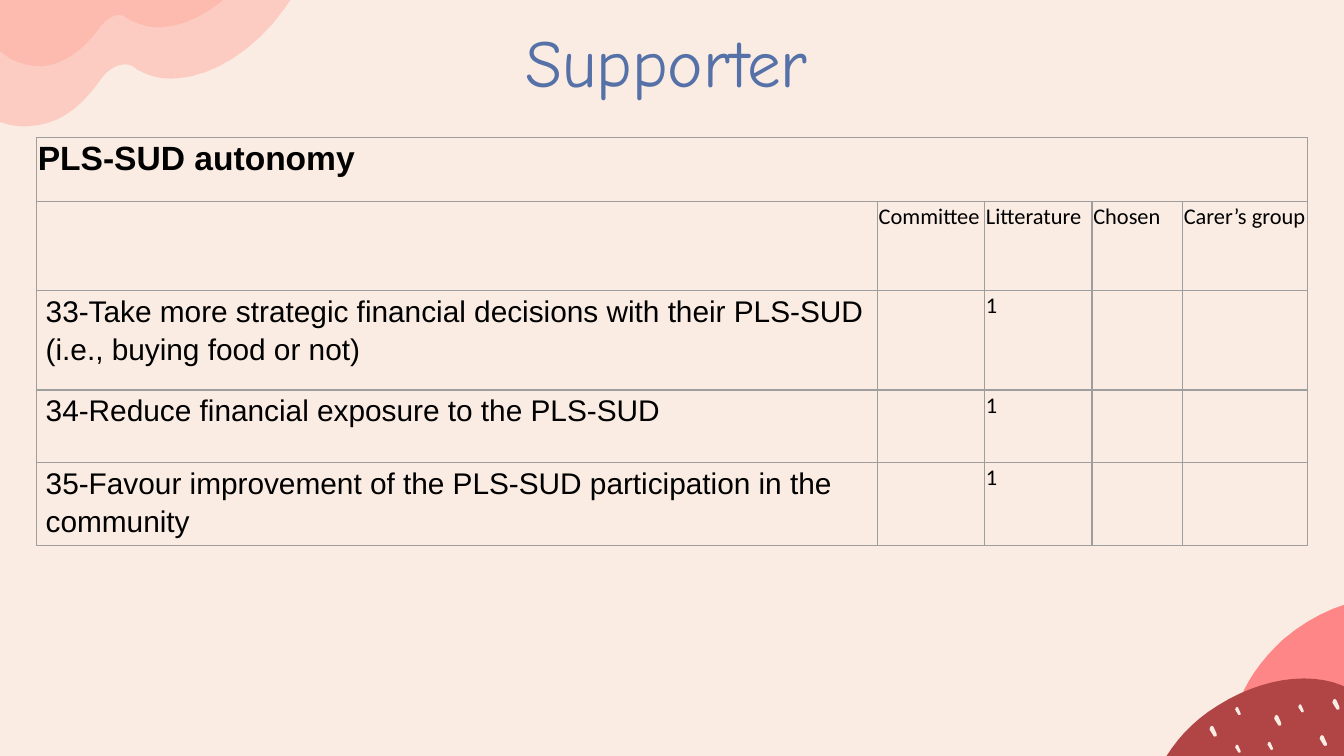
import pptx
import pptx.dml.color
import pptx.enum.text
import pptx.oxml
import pptx.oxml.ns
import pptx.util
from pptx.util import Pt

COLORS = {
    "background": "FAECE3", "blush": "FFA79B", "coral": "FF8687",
    "maroon": "B14545", "title": "5571A7", "text": "000000", "border": "9E9E9E",
}
CURVE_STEPS = 8


def rgb(name):
    return pptx.dml.color.RGBColor.from_string(COLORS[name])


def add_outline(start, segments, color):
    """Draw a closed outline; a segment is a line (x, y) or a Bezier of six numbers."""
    points = [start]
    for segment in segments:
        if len(segment) == 2:
            points.append(segment)
            continue
        x0, y0 = points[-1]
        x1, y1, x2, y2, x3, y3 = segment
        for step in range(1, CURVE_STEPS + 1):
            t = step / CURVE_STEPS
            a, b, c, d = (1 - t) ** 3, 3 * t * (1 - t) ** 2, 3 * t * t * (1 - t), t ** 3
            points.append((a * x0 + b * x1 + c * x2 + d * x3,
                           a * y0 + b * y1 + c * y2 + d * y3))
    corners = [(Pt(x), Pt(y)) for x, y in points]
    builder = slide.shapes.build_freeform(*corners[0])
    builder.add_line_segments(corners[1:], close=True)
    shape = builder.convert_to_shape()
    shape.shadow.inherit = False
    shape.fill.solid()
    shape.fill.fore_color.rgb = rgb(color)
    shape.line.fill.background()
    return shape


presentation = pptx.Presentation()
presentation.slide_width, presentation.slide_height = Pt(720), Pt(405)
slide = presentation.slides.add_slide(presentation.slide_layouts[6])
slide.background.fill.solid()
slide.background.fill.fore_color.rgb = rgb("background")

# Translucent blobs, top left
large_blob = ((70.5, -117.5), [
    (54, -112.5, 36.5, -101.5, 24.5, -87), (4.5, -64, -4.5, -38, -2, -18),
    (-1.5, -13.5, -3, -9.5, -6, -5), (-25, 22, -24.5, 53, -5, 63.5),
    (1.5, 66, 8.5, 68.5, 16, 67.5), (29, 67, 42, 60, 54, 42.5),
    (57.5, 37.5, 62.5, 34.5, 67, 34.5), (68.5, 34.5, 70.5, 35, 72, 36),
    (72.5, 36.5, 73.5, 37.5, 75, 38), (80.5, 41, 87, 42.5, 94.5, 42),
    (114, 41, 137, 26.5, 152.5, 4.5), (162.5, -9.5, 168, -24.5, 168.5, -37.5),
])
small_blob = ((65.5, -117.5), [
    (52, -113, 37.5, -104.5, 27.5, -92), (11, -74, 4.5, -52.5, 6, -36),
    (6.5, -32.5, 5, -29, 3, -25), (-12, -3, -11.5, 22.5, 5, 31),
    (10, 34, 16.5, 35.5, 22.5, 35.5), (33, 34.5, 44, 28, 53.5, 14.5),
    (56, 11, 60.5, 8, 63.5, 8), (65.5, 8, 67, 8.5, 67.5, 9.5),
    (69, 10, 70, 11, 70.5, 11), (75.5, 13.5, 81.5, 15, 87, 14.5),
    (103, 13.5, 121.5, 2, 134.5, -16), (142.5, -27.5, 147, -39.5, 147.5, -50.5),
])
for start, segments in (large_blob, small_blob):
    blob = add_outline(start, segments, "blush")
    color_element = blob.fill._xPr.find(".//" + pptx.oxml.ns.qn("a:srgbClr"))
    color_element.append(pptx.oxml.parse_xml(
        f'<a:alpha {pptx.oxml.ns.nsdecls("a")} val="47000"/>'))

# Solid blobs, bottom right
add_outline((822, 316), [
    (831.5, 316, 840, 319.5, 847.5, 326), (863.5, 340.5, 858, 368.5, 834.5, 390),
    (831, 394, 828, 397.5, 827.5, 401), (825, 421, 811.5, 442.5, 788.5, 459.5),
    (773.5, 470, 754.5, 476.5, 738, 477.5), (663, 378.5),
    (666.5, 366.5, 675.5, 353.5, 687.5, 342.5), (704, 328.5, 723.5, 320.5, 741, 320.5),
    (751, 320.5, 761, 324, 767.5, 330.5), (768, 331, 769, 332, 769.5, 332.5),
    (772, 335, 774, 335.5, 777, 335.5), (780.5, 335.5, 784, 334, 787.5, 331),
    (800.5, 320.5, 811.5, 316, 822, 316),
], "coral")
add_outline((698.5, 363.5), [
    (713.5, 363.5, 726, 368.5, 733.5, 378), (733.5, 379.5, 734.5, 380, 735, 381),
    (736.5, 384, 740, 385, 744, 385), (746.5, 385, 750, 384.5, 753, 382.5),
    (764.5, 375, 774.5, 372, 783.5, 372), (795.5, 372, 806, 377.5, 813, 386.5),
    (826.5, 402.5, 816.5, 430.5, 790.5, 447), (786, 450.5, 783, 453.5, 782, 457),
    (776, 476.5, 757, 496, 733.5, 509), (720, 515.5, 705, 519, 691, 519),
    (687.5, 519, 684.5, 519, 681, 518.5), (622.5, 409.5),
    (628.5, 398, 638.5, 386.5, 652.5, 378), (667.5, 368.5, 684, 363.5, 698.5, 363.5),
], "maroon")

# Seeds: left, top, scale
seed = [(1.4, 0), (2.2, 0.7), (3.8, 4.4), (3.8, 5.6), (2.6, 5.8), (2.2, 5.5), (0, 2), (0.5, 0.5)]
for left, top, scale in [
    (661.7, 378.7, 0.75), (679, 397.4, 0.75), (695.5, 377.3, 0.75), (682.6, 383, 1),
    (713.8, 374.4, 1), (648, 388.8, 1), (707, 393.8, 1), (661.7, 398.9, 0.75),
]:
    corners = [(left + x * scale, top + y * scale) for x, y in seed]
    add_outline(corners[0], corners[1:], "background")

# Title
title = slide.shapes.add_textbox(Pt(53.5), Pt(9.5), Pt(607), Pt(45.5))
frame = title.text_frame
frame.word_wrap = True
frame.vertical_anchor = pptx.enum.text.MSO_ANCHOR.MIDDLE
frame.margin_left = frame.margin_right = frame.margin_top = frame.margin_bottom = 0
paragraph = frame.paragraphs[0]
paragraph.text = "Supporter"
paragraph.alignment = pptx.enum.text.PP_ALIGN.CENTER
paragraph.font.name = "Comic Neue"
paragraph.font.size = Pt(36)
paragraph.font.color.rgb = rgb("title")

# Table
rows = [
    ["PLS-SUD autonomy", "", "", "", ""],
    ["", "Committee", "Litterature", "Chosen", "Carer’s group"],
    ["33-Take more strategic financial decisions with their PLS-SUD (i.e., buying food or not)",
     "", "1", "", ""],
    ["34-Reduce financial exposure to the PLS-SUD", "", "1", "", ""],
    ["35-Favour improvement of the PLS-SUD participation in the community", "", "1", "", ""],
]
widths = [450.5, 57.5, 57.5, 48.5, 67]
heights = [34.5, 47.5, 53.5, 39, 39]
table = slide.shapes.add_table(len(rows), len(widths), Pt(19.5), Pt(73.5),
                               Pt(sum(widths)), Pt(sum(heights))).table
table.first_row = table.horz_banding = False
for column, width in zip(table.columns, widths):
    column.width = Pt(width)
for row, height in zip(table.rows, heights):
    row.height = Pt(height)
table.cell(0, 0).merge(table.cell(0, len(widths) - 1))

for row_index, texts in enumerate(rows):
    for column_index, text in enumerate(texts):
        is_heading = row_index == 0
        is_item = row_index >= 2 and column_index == 0
        cell = table.cell(row_index, column_index)
        cell.fill.background()
        for position, side in enumerate(("lnL", "lnR", "lnT", "lnB")):
            cell._tc.get_or_add_tcPr().insert(position, pptx.oxml.parse_xml(
                f'<a:{side} {pptx.oxml.ns.nsdecls("a")} w="{Pt(0.75)}"><a:solidFill>'
                f'<a:srgbClr val="{COLORS["border"]}"/></a:solidFill></a:{side}>'))
        cell.margin_left = cell.margin_right = Pt(5 if is_item else 0.75)
        cell.margin_top = cell.margin_bottom = 0
        paragraph = cell.text_frame.paragraphs[0]
        paragraph.text = text
        paragraph.line_spacing = 1.15 if is_item else 1.07
        paragraph.space_after = Pt(10 if is_item else 8)
        paragraph.font.name = "Arial" if is_heading or is_item else "Calibri"
        paragraph.font.size = Pt(18 if is_heading else 16 if is_item else 12)
        paragraph.font.bold = is_heading
        paragraph.font.color.rgb = rgb("text")

presentation.save("out.pptx")
